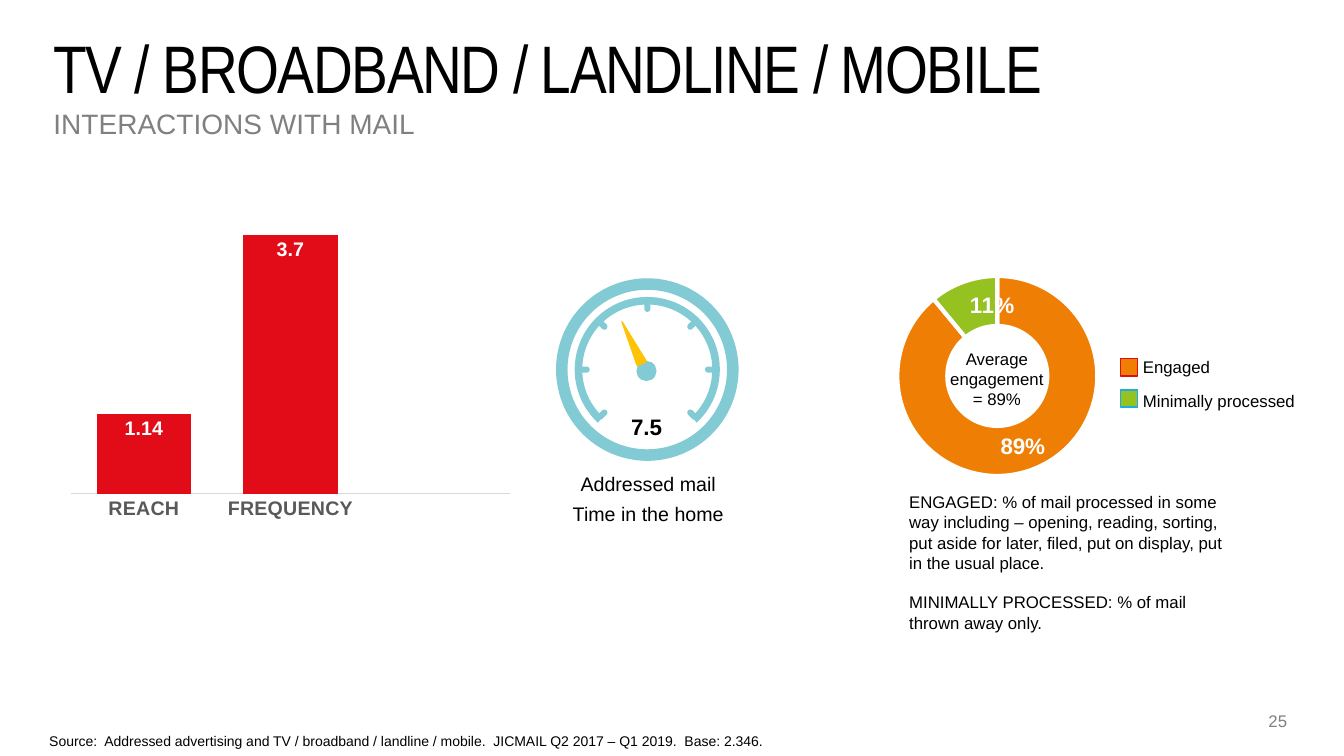
from dataclasses import dataclass
from math import cos, radians, sin

from lxml import etree
from pptx import Presentation
from pptx.chart.data import CategoryChartData
from pptx.dml.color import RGBColor
from pptx.enum.chart import XL_CHART_TYPE as ChartType
from pptx.enum.chart import XL_LABEL_POSITION as LabelPos
from pptx.enum.chart import XL_TICK_MARK as Tick
from pptx.enum.shapes import MSO_SHAPE as Shape
from pptx.enum.text import PP_ALIGN as Align
from pptx.oxml.ns import qn
from pptx.util import Pt


@dataclass(frozen=True)
class Theme:
    font: str = "Arial"
    title_font: str = "Arial Narrow"
    black: str = "000000"
    white: str = "FFFFFF"
    grey: str = "808080"
    axis_text: str = "595959"
    axis_line: str = "D9D9D9"
    red: str = "E20C18"
    blue: str = "1BACE4"
    orange: str = "EF7E05"
    green: str = "95C121"
    dial: str = "82CBD4"
    needle: str = "FDC304"
    title: int = 48
    subtitle: int = 20
    value: int = 16
    label: int = 14
    body: int = 12
    source: int = 10


T = Theme()


def rgb(color):
    return RGBColor.from_string(color)


def set_font(font, size, color=T.black, bold=False, name=T.font):
    font.name, font.size, font.bold = name, Pt(size), bold
    font.color.rgb = rgb(color)


def add_text(shapes, box, paragraphs, size, color=T.black, bold=False,
             name=T.font, align=Align.LEFT, inset=True, wrap=True, gap=0):
    """Add a text box; gap is the space before each paragraph but the first."""
    tf = shapes.add_textbox(*map(Pt, box)).text_frame
    tf.word_wrap = wrap
    if not inset:
        tf.margin_left = tf.margin_right = tf.margin_top = tf.margin_bottom = 0
    for i, text in enumerate(paragraphs):
        p = tf.add_paragraph() if i else tf.paragraphs[0]
        p.add_run().text = text
        p.alignment = align
        if i:
            p.space_before = Pt(gap)
        set_font(p.font, size, color, bold, name)
    return tf


def add_solid(shapes, kind, box, fill, line=None, rotation=0, adjust=()):
    sp = shapes.add_shape(kind, *map(Pt, box))
    sp.shadow.inherit = False
    sp.rotation = rotation
    for i, value in enumerate(adjust):
        sp.adjustments[i] = value
    sp.fill.solid()
    sp.fill.fore_color.rgb = rgb(fill)
    if line:
        sp.line.color.rgb = rgb(line)
        sp.line.width = Pt(1)
    else:
        sp.line.fill.background()
    return sp


def centred(x, y, width, height):
    return x - width / 2, y - height / 2, width, height


def add_plain_chart(shapes, kind, box, categories, values, number_format):
    data = CategoryChartData(number_format=number_format)
    data.categories = categories
    data.add_series("Series 1", values)
    chart = shapes.add_chart(kind, *map(Pt, box), data).chart
    chart.has_title = chart.has_legend = False
    set_font(chart.font, T.source)
    return chart


def add_bars(shapes):
    chart = add_plain_chart(shapes, ChartType.COLUMN_CLUSTERED, (44, 148.3, 327, 227.5),
                            ["REACH", "FREQUENCY", ""], [1.14, 3.7, None], "General")
    plot = chart.plots[0]
    plot.vary_by_categories = False
    plot.gap_width = 55

    value_axis = chart.value_axis
    value_axis.minimum_scale, value_axis.maximum_scale = 0, 4
    value_axis.has_major_gridlines = value_axis.visible = False
    axis = chart.category_axis
    axis.major_tick_mark = axis.minor_tick_mark = Tick.NONE
    axis.format.line.color.rgb = rgb(T.axis_line)
    axis.format.line.width = Pt(0.75)
    set_font(axis.tick_labels.font, T.label, T.axis_text, True)

    series = plot.series[0]
    series.format.fill.solid()
    series.format.fill.fore_color.rgb = rgb(T.red)
    labels = series.data_labels
    labels.show_value = True
    labels.position = LabelPos.INSIDE_END
    set_font(labels.font, T.label, T.white, True)


def make_layout(**settings):
    layout = etree.Element(qn("c:layout"))
    manual = etree.SubElement(layout, qn("c:manualLayout"))
    for tag, value in settings.items():
        etree.SubElement(manual, qn(f"c:{tag}")).set("val", str(value))
    return layout


def add_engagement_ring(shapes):
    chart = add_plain_chart(shapes, ChartType.DOUGHNUT, (592.5, 179.3, 239.8, 178.6),
                            ["1", "2"], [0.89, 0.11], "0%")
    series = chart.plots[0].series[0]
    for i, color in enumerate((T.orange, T.green)):
        fmt = series.points[i].format
        fmt.fill.solid()
        fmt.fill.fore_color.rgb = rgb(color)
        fmt.line.color.rgb = rgb(T.white)
        fmt.line.width = Pt(3)
    labels = series.data_labels
    labels.show_value, labels.show_percentage = True, False
    labels.number_format, labels.number_format_is_linked = "0%", False
    set_font(labels.font, T.value, T.white, True)

    set_font(series.points[1].data_label.font, T.value, T.white, True)
    small_label = labels._element.find(qn("c:dLbl"))
    small_label.insert(1, make_layout(x=0.06, y=0))

    plot_area = chart._chartSpace.chart.plotArea
    for old in plot_area.findall(qn("c:layout")):
        plot_area.remove(old)
    plot_area.insert(0, make_layout(layoutTarget="inner", xMode="edge", yMode="edge",
                                    x=0.2, y=0.1, w=0.6, h=0.8))


def add_gauge(shapes):
    x, y = 462.4, 264
    add_solid(shapes, Shape.DONUT, centred(x, y, 130.4, 130.4), T.dial, adjust=[0.063])
    add_solid(shapes, Shape.OVAL, centred(x - 0.6, y + 1, 14.4, 14.4), T.dial)
    for angle in range(135, 406, 45):
        a = radians(angle)
        tick = centred(x + 44.8 * cos(a), y + 44.8 * sin(a), 4.3, 7.2)
        add_solid(shapes, Shape.ROUND_2_SAME_RECTANGLE, tick, T.dial,
                  rotation=angle - 90, adjust=[0.5, 0])
    # Block arc angles are stored in 60000ths of a degree, scaled by 100000.
    add_solid(shapes, Shape.BLOCK_ARC, centred(x, y, 103.7, 103.7), T.dial,
              adjust=[133 * 0.6, 47 * 0.6, 0.052])
    add_solid(shapes, Shape.ISOSCELES_TRIANGLE, centred(451.4, 244.8, 7.2, 33.1),
              T.needle, T.needle, rotation=334.6)
    add_text(shapes, (443.5, 291.6, 36.7, 26.6), ["7.5"], T.value, bold=True,
             align=Align.CENTER, wrap=False)
    for top, text in ((333.4, "Addressed mail"), (355, "Time in the home")):
        add_text(shapes, (401.5, top, 123.1, 24.5), [text], T.label,
                 align=Align.CENTER, wrap=False)


def add_legend(shapes):
    for top, text_top, width, text, fill, line in (
            (256.3, 251.3, 62.6, "Engaged", T.orange, T.red),
            (278.6, 275.8, 123.8, "Minimally processed", T.green, T.blue)):
        add_solid(shapes, Shape.RECTANGLE, (800.6, top, 12.2, 12.2), fill, line)
        add_text(shapes, (809.3, text_top, width, 21.6), [text], T.body, wrap=False)


def main():
    prs = Presentation()
    prs.slide_width, prs.slide_height = Pt(960), Pt(540)
    s = prs.slides.add_slide(prs.slide_layouts[6])
    shapes = s.shapes

    title = add_text(shapes, (38.2, 32.4, 878.4, 37.4), ["TV / BROADBAND / LANDLINE / MOBILE"],
                     T.title, name=T.title_font, inset=False).paragraphs[0]
    title.line_spacing = Pt(44)
    title.runs[0].font._element.set("spc", "-100")
    subtitle = add_text(shapes, (38.2, 78.5, 881.3, 20.9), ["INTERACTIONS WITH MAIL"],
                        T.subtitle, T.grey, inset=False).paragraphs[0]
    subtitle.line_spacing = 0.9
    add_text(shapes, (885.6, 507.6, 33.8, 14.4), ["25"], T.body, T.grey,
             align=Align.RIGHT, inset=False)

    add_bars(shapes)
    add_gauge(shapes.add_group_shape().shapes)
    add_engagement_ring(shapes)
    add_legend(shapes.add_group_shape().shapes)
    add_text(shapes, (649.4, 351.4, 236.2, 103), [
        "ENGAGED: % of mail processed in some way including – opening, reading, sorting, "
        "put aside for later, filed, put on display, put in the usual place.",
        "MINIMALLY PROCESSED: % of mail thrown away only."], T.body, inset=False, gap=14)
    add_text(shapes, (668.2, 245.5, 87.8, 51.1), ["Average engagement = 89%"], T.body,
             align=Align.CENTER)
    add_text(shapes, (28.1, 519.8, 531.4, 19.4), [
        "Source:  Addressed advertising and TV / broadband / landline / mobile.  "
        "JICMAIL Q2 2017 – Q1 2019.  Base: 2.346."], T.source, wrap=False)
    prs.save("out.pptx")


if __name__ == "__main__":
    main()
